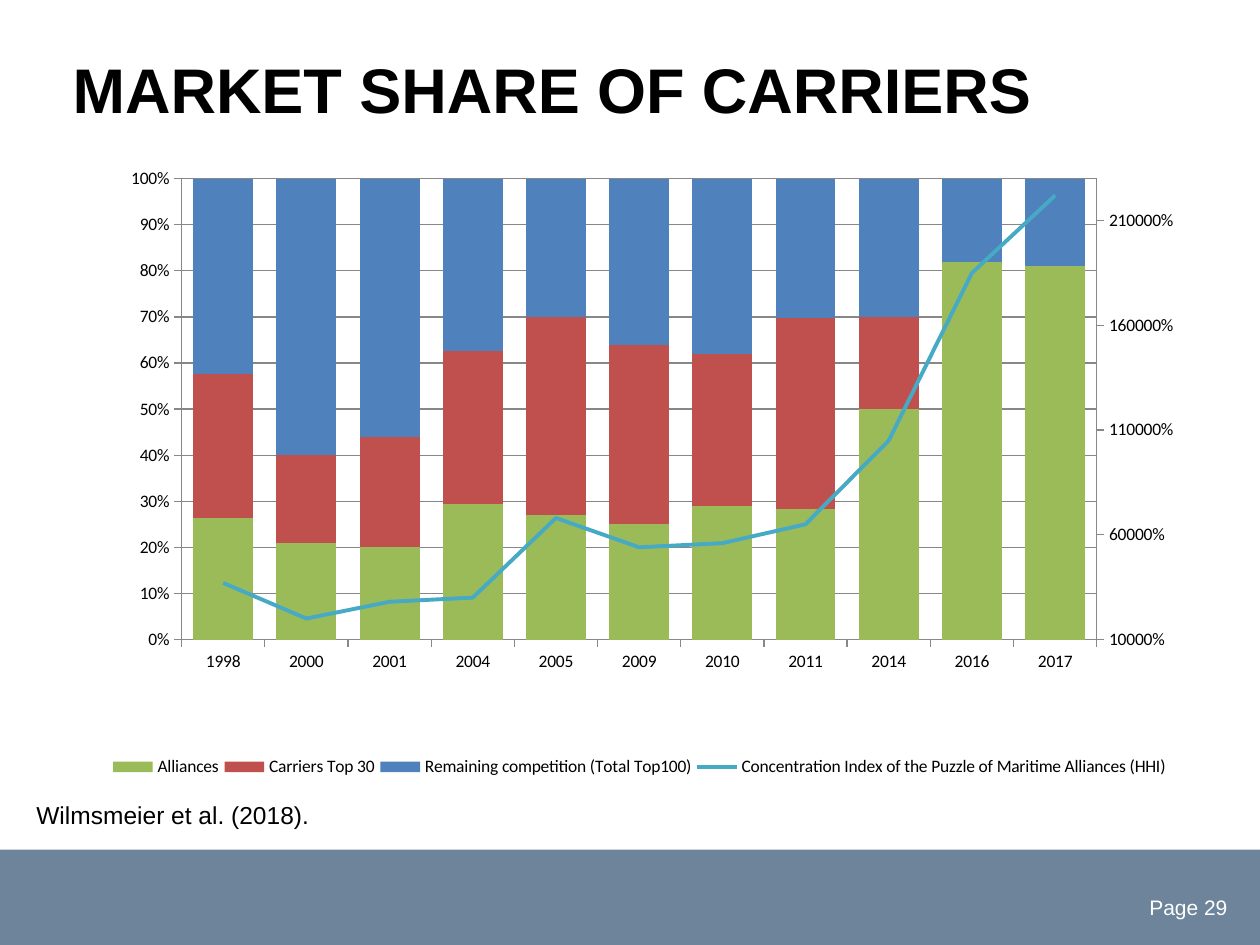
from lxml.etree import SubElement as Sub
from pptx import Presentation
from pptx.chart.axis import ValueAxis
from pptx.chart.data import CategoryChartData as Data
from pptx.dml.color import RGBColor
from pptx.enum.chart import XL_CHART_TYPE as Kind, XL_LEGEND_POSITION as Pos
from pptx.enum.chart import XL_MARKER_STYLE as Mark, XL_TICK_MARK as Tick
from pptx.enum.shapes import MSO_SHAPE as Form
from pptx.enum.text import MSO_ANCHOR as Anchor, PP_ALIGN as Align
from pptx.oxml import parse_xml
from pptx.oxml.ns import qn
from pptx.util import Pt

TITLE = "MARKET SHARE OF CARRIERS"
SOURCE = "Wilmsmeier et al. (2018)."
PAGE = "Page 29"
YEARS = ["1998", "2000", "2001", "2004", "2005", "2009",
         "2010", "2011", "2014", "2016", "2017"]
SHARES = [
    ("Alliances", "9BBB59", [26, 21, 20, 29, 27, 25, 29, 28, 50, 82, 81]),
    ("Carriers Top 30", "C0504D",
     [31, 19, 24, 33, 43, 39, 33, 41, 20, None, None]),
    ("Remaining competition (Total Top100)", "4F81BD",
     [42, 60, 56, 37, 30, 36, 38, 30, 30, 18, 19]),
]
INDEX = ("Concentration Index of the Puzzle of Maritime Alliances (HHI)",
         "46AAC5",
         [370, 200, 280, 300, 680, 540, 560, 650, 1050, 1850, 2220])
GRAY = "888888"
NS = 'xmlns:c="http://schemas.openxmlformats.org/drawingml/2006/chart"'


def color(code):
    return RGBColor.from_string(code)


def style(font, size, code="000000", name="Arial", bold=False):
    font.size, font.name, font.bold = Pt(size), name, bold
    font.color.rgb = color(code)


def write(shape, text, size, code="000000", align=Align.LEFT, bold=False):
    frame = shape.text_frame
    frame.word_wrap = True
    frame.vertical_anchor = Anchor.TOP
    para = frame.paragraphs[0]
    para.alignment = align
    run = para.add_run()
    run.text = text
    style(run.font, size, code, bold=bold)
    return frame


def stroke(line, code, width):
    line.color.rgb = color(code)
    line.width = Pt(width)


def dress(axis):
    axis.major_tick_mark = Tick.OUTSIDE
    axis.minor_tick_mark = Tick.NONE
    style(axis.tick_labels.font, 10, name="Calibri")
    stroke(axis.format.line, GRAY, 0.75)


def place(host, at, box, inner=False):
    """Give a chart part a fixed place, in fractions of the chart."""
    for old in host.findall(qn("c:layout")):
        host.remove(old)
    layout = parse_xml(f"<c:layout {NS}/>")
    host.insert(at, layout)
    spot = Sub(layout, qn("c:manualLayout"))
    if inner:
        Sub(spot, qn("c:layoutTarget"), val="inner")
    for side in "xy":
        Sub(spot, qn(f"c:{side}Mode"), val="edge")
    for key, val in zip("xywh", box):
        Sub(spot, qn(f"c:{key}"), val=str(val))


def split(chart):
    """Move the last series to a line plot and return its right axis."""
    area = chart._chartSpace.chart.plotArea
    bars = area.find(qn("c:barChart"))
    ser = bars.findall(qn("c:ser"))[-1]
    for flag in ser.findall(qn("c:invertIfNegative")):
        ser.remove(flag)
    plot = parse_xml(
        f'<c:lineChart {NS}><c:grouping val="standard"/>'
        '<c:varyColors val="0"/><c:marker val="1"/>'
        '<c:axId val="50"/><c:axId val="60"/></c:lineChart>')
    plot.insert(2, ser)
    bars.addnext(plot)
    left = area.find(qn("c:valAx"))
    cats = parse_xml(
        f'<c:catAx {NS}><c:axId val="50"/><c:scaling>'
        '<c:orientation val="minMax"/></c:scaling><c:delete val="1"/>'
        '<c:axPos val="b"/><c:crossAx val="60"/>'
        '<c:crosses val="autoZero"/></c:catAx>')
    right = parse_xml(
        f'<c:valAx {NS}><c:axId val="60"/><c:scaling>'
        '<c:orientation val="minMax"/></c:scaling><c:delete val="0"/>'
        '<c:axPos val="r"/><c:numFmt formatCode="0" sourceLinked="0"/>'
        '<c:tickLblPos val="nextTo"/><c:crossAx val="50"/>'
        '<c:crosses val="max"/></c:valAx>')
    left.addnext(cats)
    cats.addnext(right)
    return ValueAxis(right)


def draw(slide):
    data = Data(number_format="0")
    data.categories = YEARS
    for name, _, vals in SHARES + [INDEX]:
        data.add_series(name, vals)
    chart = slide.shapes.add_chart(
        Kind.COLUMN_STACKED_100, Pt(61.2), Pt(86.4), Pt(609.8), Pt(393.1),
        data).chart
    style(chart.font, 10, name="Calibri")
    chart.has_title = False
    right = split(chart)
    bars, line = chart.plots
    bars.gap_width, bars.overlap = 39, 100
    bars.vary_by_categories = False
    for ser, (_, code, _) in zip(bars.series, SHARES):
        ser.format.fill.solid()
        ser.format.fill.fore_color.rgb = color(code)
    trend = line.series[0]
    trend.smooth = False
    trend.marker.style = Mark.NONE
    stroke(trend.format.line, INDEX[1], 2.25)

    left = chart.value_axis
    for axis in (chart.category_axis, left, right):
        dress(axis)
    left.has_major_gridlines = True
    stroke(left.major_gridlines.format.line, GRAY, 0.75)
    left.tick_labels.number_format = "0%"
    left.tick_labels.number_format_is_linked = False
    right.minimum_scale, right.maximum_scale = 100, 2300
    right.major_unit = 500

    chart.has_legend = True
    key = chart.legend
    key.position = Pos.TOP
    key.include_in_layout = False
    style(key.font, 10, name="Calibri")
    place(key._element, 1, (0, 0.87, 1, 0.05))
    place(chart._chartSpace.chart.plotArea, 0,
          (0.07, 0.04, 0.86, 0.67), inner=True)


def main():
    deck = Presentation()
    deck.slide_width, deck.slide_height = Pt(720), Pt(540)
    slide = deck.slides.add_slide(deck.slide_layouts[5])
    shapes = slide.shapes

    band = shapes.add_shape(Form.RECTANGLE, 0, Pt(485.5), Pt(720), Pt(54.5))
    band.shadow.inherit = False
    band.fill.solid()
    band.fill.fore_color.rgb = color("6D849A")
    band.line.fill.background()
    page = shapes.add_textbox(Pt(443.5), Pt(507.6), Pt(265), Pt(28.8))
    write(page, PAGE, 12, "FFFFFF", Align.RIGHT)

    title = shapes.title
    title.left, title.top = Pt(36), Pt(21.6)
    title.width, title.height = Pt(648), Pt(90)
    frame = write(title, TITLE, 36, bold=True)
    frame.margin_left, frame.margin_top = Pt(5.5), Pt(7.5)

    draw(slide)
    note = shapes.add_textbox(Pt(13.7), Pt(452.2), Pt(648), Pt(34.6))
    write(note, SOURCE, 14).margin_top = Pt(5)
    deck.save("out.pptx")


if __name__ == "__main__":
    main()
